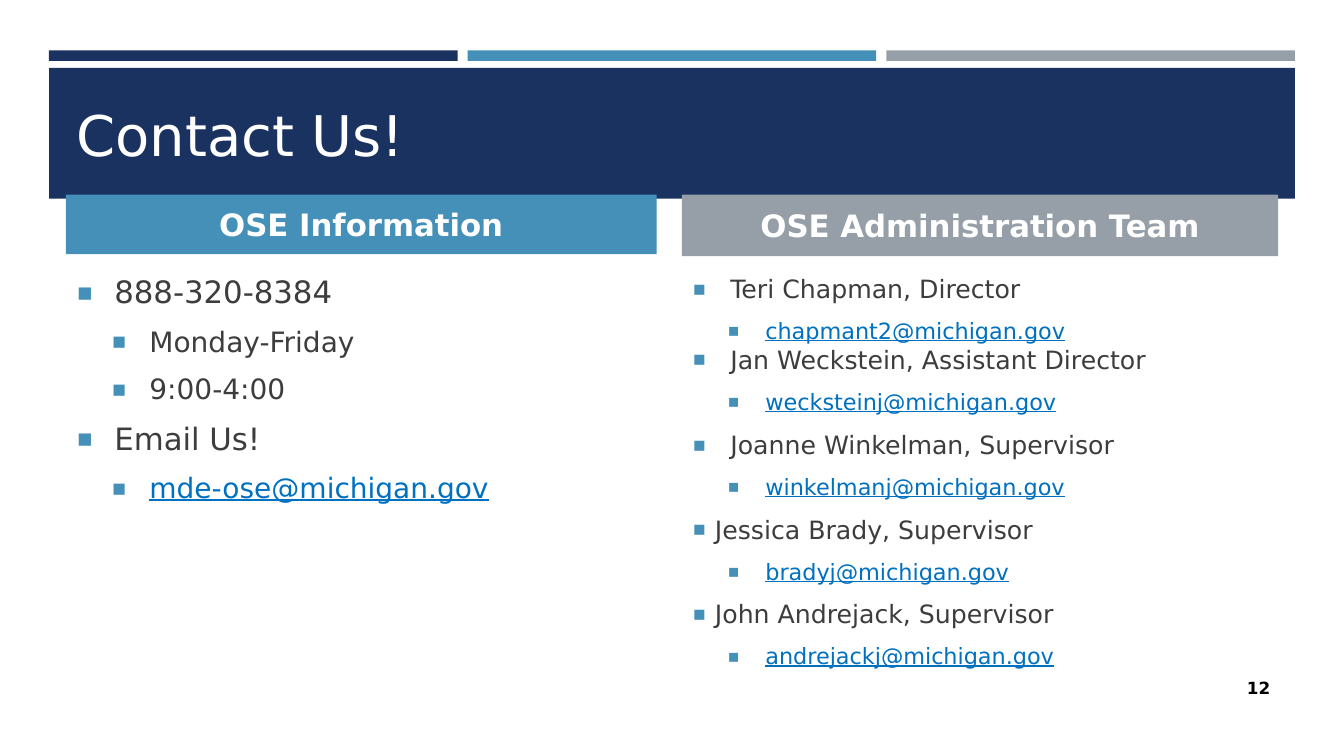
from dataclasses import dataclass

from lxml import etree
from pptx import Presentation
from pptx.dml.color import RGBColor
from pptx.enum import shapes, text
from pptx.oxml import ns
from pptx.util import Pt


@dataclass(frozen=True)
class Theme:
    navy: str = "1A3260"
    blue: str = "4590B8"
    gray: str = "969FA7"
    ink: str = "3D3D3D"
    link: str = "0070C0"
    white: str = "FFFFFF"
    black: str = "000000"
    face: str = "DejaVu Sans"
    title: int = 40
    head: int = 22
    page: int = 12


THEME = Theme()
MID = text.MSO_ANCHOR.MIDDLE
ALIGN = text.PP_ALIGN

# Each row: text, level, size, space before, left indent, hanging indent
INFO = [
    ("888-320-8384", 0, 22, 0, 27, 27),
    ("Monday-Friday", 1, 20, 10, 52, 27),
    ("9:00-4:00", 1, 20, 10, 52, 27),
    ("Email Us!", 0, 22, 10.4, 27, 27),
    ("mde-ose@michigan.gov", 1, 20, 10, 52, 27),
]
# Each row: name and role, address, space before, indent
STAFF = [
    ("Teri Chapman, Director", "chapmant2", 0, 27),
    ("Jan Weckstein, Assistant Director", "wecksteinj", 0, 27),
    ("Joanne Winkelman, Supervisor", "winkelmanj", 10.4, 27),
    ("Jessica Brady, Supervisor", "bradyj", 9.8, 16),
    ("John Andrejack, Supervisor", "andrejackj", 9.8, 16),
]
TEAM = [
    row
    for name, user, gap, ind in STAFF
    for row in (
        (name, 0, 18, gap, ind, ind),
        (f"{user}@michigan.gov", 1, 16, 9.8, 52, 27),
    )
]


def apply(item, **vals):
    for key, val in vals.items():
        setattr(item, key, val)


def place(shape, box):
    x, y, w, h = map(Pt, box)
    apply(shape, left=x, top=y, width=w, height=h)


def paint(shape, color):
    shape.fill.solid()
    shape.fill.fore_color.rgb = RGBColor.from_string(color)


def frame(shape, anchor):
    tf = shape.text_frame
    apply(tf, word_wrap=True, auto_size=text.MSO_AUTO_SIZE.NONE,
          vertical_anchor=anchor, margin_left=Pt(7.2), margin_right=Pt(7.2),
          margin_top=Pt(3.6), margin_bottom=Pt(3.6))
    return tf


def write(para, words, size, color, **vals):
    run = para.add_run()
    run.text = words
    apply(run.font, name=THEME.face, size=Pt(size), **vals)
    run.font.color.rgb = RGBColor.from_string(color)


def label(shape, box, words, size, color, align, bold):
    place(shape, box)
    para = frame(shape, MID).paragraphs[0]
    apply(para, alignment=align, space_before=Pt(0))
    write(para, words, size, color, bold=bold)


def bullet(para, left, hang):
    props = para._p.get_or_add_pPr()
    props.set("marL", str(Pt(left)))
    props.set("indent", str(-Pt(hang)))
    tint = etree.SubElement(props, ns.qn("a:buClr"))
    etree.SubElement(tint, ns.qn("a:srgbClr"), val=THEME.blue)
    etree.SubElement(props, ns.qn("a:buSzPct"), val="80000")
    etree.SubElement(props, ns.qn("a:buFont"), typeface=THEME.face)
    etree.SubElement(props, ns.qn("a:buChar"), char="▪")


def block(slide, box, color):
    shape = slide.shapes.add_shape(shapes.MSO_SHAPE.RECTANGLE, *map(Pt, box))
    shape.shadow.inherit = False
    shape.line.fill.background()
    paint(shape, color)


def banner(slide, box):
    """Three color bars above a title band."""
    x, y, w, h = box
    gap = 7.2
    bar = (w - 2 * gap) / 3
    for i, color in enumerate((THEME.navy, THEME.blue, THEME.gray)):
        block(slide, (x + i * (bar + gap), y, bar, 7.5), color)
    block(slide, (x, y + 12.5, w, h - 12.5), THEME.navy)
    label(slide.shapes.title, (x + 12.5, y + 19.5, w - 25, 80),
          "Contact Us!", THEME.title, THEME.white, ALIGN.LEFT, False)


def column(head, body, box, tall, name, color, rows):
    """Filled heading with a bulleted list below it."""
    x, y, w, h = box
    label(head, (x, y, w, tall), name, THEME.head, THEME.white,
          ALIGN.CENTER, True)
    paint(head, color)
    place(body, (x + 0.5, y + 52.5, w, h - 52.5))
    tf = frame(body, text.MSO_ANCHOR.TOP)
    for i, (words, level, size, gap, left, hang) in enumerate(rows):
        para = tf.add_paragraph() if i else tf.paragraphs[0]
        apply(para, level=level, space_before=Pt(gap), alignment=ALIGN.LEFT)
        bullet(para, left, hang)
        mail = "@" in words
        write(para, words, size, THEME.link if mail else THEME.ink,
              underline=mail)


def number(slide, box):
    """Page number."""
    label(slide.shapes.add_textbox(0, 0, 0, 0), box, "12", THEME.page,
          THEME.black, ALIGN.RIGHT, True)


def contact(slide):
    """Title banner, two columns and a page number."""
    parts = slide.placeholders
    banner(slide, (35, 36, 890, 106))
    column(parts[1], parts[2], (47, 139, 422, 303), 42.5,
           "OSE Information", THEME.blue, INFO)
    column(parts[3], parts[4], (487, 139, 426, 401), 44,
           "OSE Administration Team", THEME.gray, TEAM)
    number(slide, (831.5, 476.5, 83, 29))
    # Bars and band sit behind the text
    tree = slide.shapes._spTree
    backs = [s for s in slide.shapes
             if s.shape_type == shapes.MSO_SHAPE_TYPE.AUTO_SHAPE]
    for i, shape in enumerate(backs):
        tree.insert(2 + i, shape._element)


def main():
    deck = Presentation()
    apply(deck, slide_width=Pt(960), slide_height=Pt(540))
    contact(deck.slides.add_slide(deck.slide_layouts[4]))
    deck.save("out.pptx")


if __name__ == "__main__":
    main()
